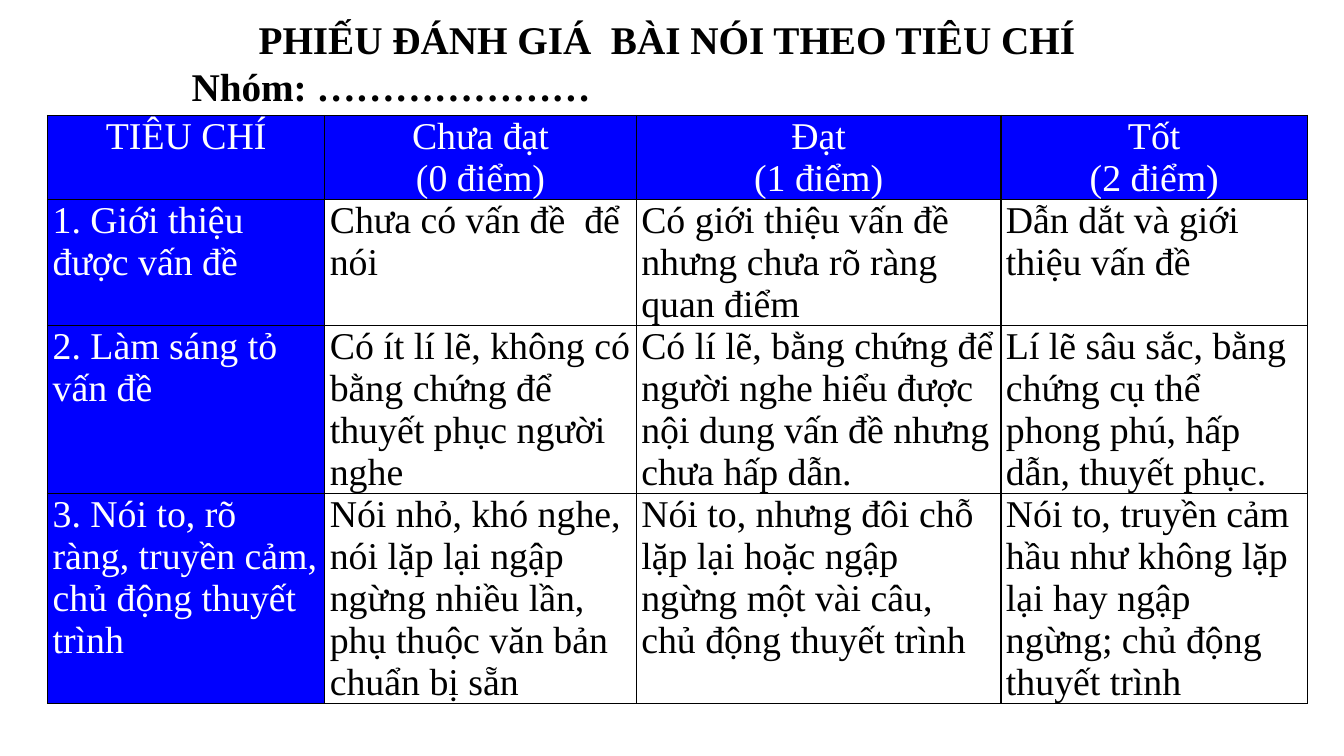
from lxml import etree
from pptx import Presentation
from pptx.dml.color import RGBColor
from pptx.enum.text import MSO_ANCHOR, MSO_AUTO_SIZE, PP_ALIGN
from pptx.oxml.ns import qn
from pptx.util import Pt

COLORS = {"header": "0000FF", "light": "FFFFFF", "dark": "000000"}
FONT = "Times New Roman"
LINE_HEIGHT = 30
COLUMN_WIDTHS = [198, 222.5, 260.5, 219]
ROW_LINES = [2, 3, 4, 5]
HEADING = ["PHIẾU ĐÁNH GIÁ  BÀI NÓI THEO TIÊU CHÍ", "Nhóm: …………………"]
CRITERIA = [
    ["TIÊU CHÍ", "Chưa đạt\n(0 điểm)", "Đạt\n(1 điểm)", "Tốt\n(2 điểm)"],
    [
        "1. Giới thiệu được vấn đề",
        "Chưa có vấn đề  để nói",
        "Có giới thiệu vấn đề nhưng chưa rõ ràng quan điểm",
        "Dẫn dắt và giới thiệu vấn đề",
    ],
    [
        "2. Làm sáng tỏ vấn đề",
        "Có ít lí lẽ, không có bằng chứng để thuyết phục người nghe",
        "Có lí lẽ, bằng chứng để người nghe hiểu được nội dung vấn đề nhưng chưa hấp dẫn.",
        "Lí lẽ sâu sắc, bằng chứng cụ thể phong phú, hấp dẫn, thuyết phục.",
    ],
    [
        "3. Nói to, rõ ràng, truyền cảm, chủ động thuyết trình",
        "Nói nhỏ, khó nghe, nói lặp lại ngập ngừng nhiều lần, phụ thuộc văn bản chuẩn bị sẵn",
        "Nói to, nhưng đôi chỗ lặp lại hoặc ngập ngừng một vài câu, chủ động thuyết trình",
        "Nói to, truyền cảm hầu như không lặp lại hay ngập ngừng; chủ động thuyết trình",
    ],
]


def format_paragraph(paragraph, size, color, alignment, bold=False):
    paragraph.alignment = alignment
    paragraph.font.name = FONT
    paragraph.font.size = Pt(size)
    paragraph.font.bold = bold
    paragraph.font.color.rgb = RGBColor.from_string(COLORS[color])


def add_heading(slide):
    title = slide.shapes.title
    title.left, title.top, title.width, title.height = Pt(129.6), Pt(7.2), Pt(693.4), Pt(75)
    frame = title.text_frame
    frame.word_wrap = True
    frame.auto_size = MSO_AUTO_SIZE.NONE
    frame.vertical_anchor = MSO_ANCHOR.TOP
    frame.text = "\n".join(HEADING)
    for paragraph, alignment in zip(frame.paragraphs, [PP_ALIGN.CENTER, PP_ALIGN.LEFT]):
        format_paragraph(paragraph, 28, "dark", alignment, bold=True)


def add_borders(cell):
    properties = cell._tc.get_or_add_tcPr()
    for side in ("lnL", "lnR", "lnT", "lnB"):
        line = etree.SubElement(properties, qn(f"a:{side}"), w=str(Pt(1)))
        fill = etree.SubElement(line, qn("a:solidFill"))
        etree.SubElement(fill, qn("a:srgbClr"), val=COLORS["dark"])


def fill_cell(cell, text, is_header, is_criterion):
    cell.margin_left = cell.margin_right = Pt(3.6)
    cell.margin_top = cell.margin_bottom = 0
    add_borders(cell)
    highlighted = is_header or is_criterion
    if highlighted:
        cell.fill.solid()
        cell.fill.fore_color.rgb = RGBColor.from_string(COLORS["header"])
    else:
        cell.fill.background()
    cell.text = text
    color = "light" if highlighted else "dark"
    alignment = PP_ALIGN.CENTER if is_header else PP_ALIGN.LEFT
    for paragraph in cell.text_frame.paragraphs:
        format_paragraph(paragraph, 27, color, alignment)


def add_criteria_table(slide):
    heights = [lines * LINE_HEIGHT for lines in ROW_LINES]
    frame = slide.shapes.add_table(
        len(CRITERIA), len(COLUMN_WIDTHS),
        Pt(34), Pt(82.5), Pt(sum(COLUMN_WIDTHS)), Pt(sum(heights)),
    )
    table = frame.table
    table.first_row = table.horz_banding = False
    for column, width in zip(table.columns, COLUMN_WIDTHS):
        column.width = Pt(width)
    for row, height in zip(table.rows, heights):
        row.height = Pt(height)
    for row_index, texts in enumerate(CRITERIA):
        for column_index, text in enumerate(texts):
            fill_cell(table.cell(row_index, column_index), text, row_index == 0, column_index == 0)


def main():
    presentation = Presentation()
    presentation.slide_width = Pt(960)
    presentation.slide_height = Pt(540)
    slide = presentation.slides.add_slide(presentation.slide_layouts[5])
    add_heading(slide)
    add_criteria_table(slide)
    presentation.save("out.pptx")


if __name__ == "__main__":
    main()
